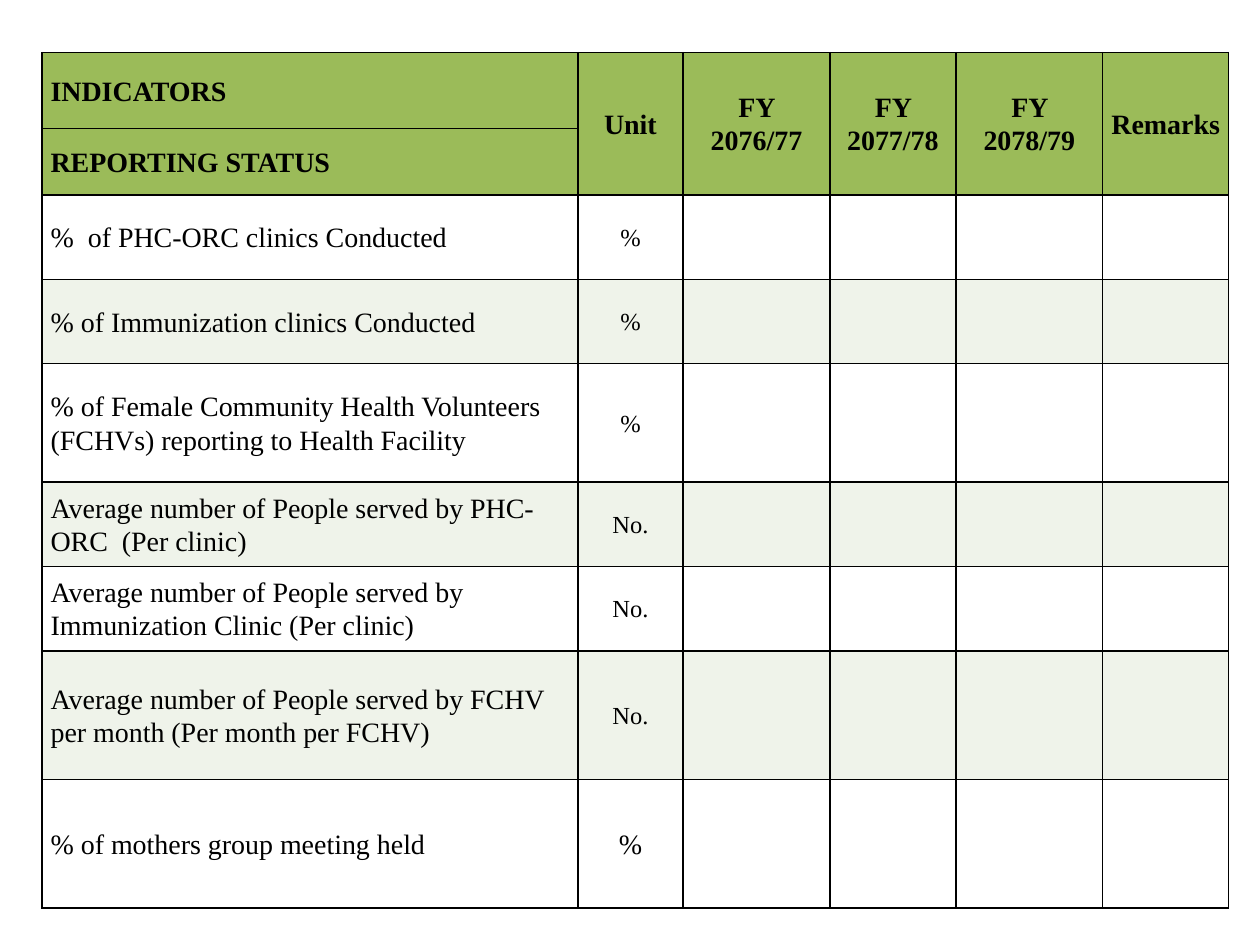
from dataclasses import dataclass

from lxml.etree import SubElement
from pptx import Presentation
from pptx.dml.color import RGBColor
from pptx.enum.text import MSO_ANCHOR, PP_ALIGN
from pptx.oxml.ns import qn
from pptx.table import Table, _Cell
from pptx.util import Cm, Pt

BLACK = RGBColor(0x00, 0x00, 0x00)
WHITE = RGBColor(0xFF, 0xFF, 0xFF)
GREEN = RGBColor(0x9B, 0xBB, 0x59)
PALE = RGBColor(0xEF, 0xF3, 0xEA)

COLUMN_WIDTHS = (10.8, 2.12, 2.96, 2.54, 2.96, 2.54)
HEADER_HEIGHTS = (1.53, 1.22)
HEADINGS = ("INDICATORS", "Unit", "FY 2076/77", "FY 2077/78", "FY 2078/79", "Remarks")
CELL_FORMAT = {
    "margin_left": Cm(0.17),
    "margin_right": Cm(0.17),
    "margin_top": Cm(0),
    "margin_bottom": Cm(0),
    "vertical_anchor": MSO_ANCHOR.MIDDLE,
}


@dataclass(frozen=True)
class Indicator:
    name: str
    unit: str
    height: float
    unit_size: int = 14


INDICATORS = (
    Indicator("%  of PHC-ORC clinics Conducted", "%", 1.7),
    Indicator("% of Immunization clinics Conducted", "%", 1.7),
    Indicator("% of Female Community Health Volunteers (FCHVs) reporting to Health Facility", "%", 2.39),
    Indicator("Average number of People served by PHC-ORC  (Per clinic)", "No.", 1.7),
    Indicator("Average number of People served by Immunization Clinic (Per clinic)", "No.", 1.7),
    Indicator("Average number of People served by FCHV per month (Per month per FCHV)", "No.", 2.59),
    Indicator("% of mothers group meeting held", "%", 2.59, 16),
)


def set_borders(cell: _Cell) -> None:
    """Outline a cell with thin black lines."""
    props = cell._tc.get_or_add_tcPr()
    for i, tag in enumerate(("a:lnL", "a:lnR", "a:lnT", "a:lnB")):
        line = SubElement(props, qn(tag), w=str(Pt(1)))
        fill = SubElement(line, qn("a:solidFill"))
        SubElement(fill, qn("a:srgbClr"), val=str(BLACK))
        props.insert(i, line)


def style_cell(cell: _Cell, color: RGBColor) -> None:
    """Apply the shared margins, fill and borders."""
    for name, value in CELL_FORMAT.items():
        setattr(cell, name, value)
    cell.fill.solid()
    cell.fill.fore_color.rgb = color
    set_borders(cell)


def write(cell: _Cell, text: str, size: int = 16, bold: bool = False, centered: bool = False) -> None:
    """Write one formatted paragraph into a cell."""
    p = cell.text_frame.paragraphs[0]
    p.line_spacing = 1.07
    p.alignment = PP_ALIGN.CENTER if centered else PP_ALIGN.LEFT
    r = p.add_run()
    r.text = text
    for name, value in {"name": "Times New Roman", "size": Pt(size), "bold": bold}.items():
        setattr(r.font, name, value)
    r.font.color.rgb = BLACK


def fill_header(table: Table) -> None:
    """Write the two header rows and merge the shared headings."""
    for col, heading in enumerate(HEADINGS):
        write(table.cell(0, col), heading, bold=True, centered=col > 0)
        if col > 0:
            table.cell(0, col).merge(table.cell(1, col))
    write(table.cell(1, 0), "REPORTING STATUS", bold=True)


def main() -> None:
    """Build the indicator table slide."""
    prs = Presentation()
    prs.slide_width, prs.slide_height = Cm(25.4), Cm(19.05)
    s = prs.slides.add_slide(prs.slide_layouts[6])
    heights = HEADER_HEIGHTS + tuple(item.height for item in INDICATORS)
    table = s.shapes.add_table(
        len(heights), len(COLUMN_WIDTHS), Cm(0.85), Cm(1.06), Cm(sum(COLUMN_WIDTHS)), Cm(sum(heights))
    ).table
    for column, width in zip(table.columns, COLUMN_WIDTHS):
        column.width = Cm(width)
    for i, (row, height) in enumerate(zip(table.rows, heights)):
        row.height = Cm(height)
        color = GREEN if i < len(HEADER_HEIGHTS) else (WHITE, PALE)[i % 2]
        for cell in row.cells:
            style_cell(cell, color)
    fill_header(table)
    for i, item in enumerate(INDICATORS, len(HEADER_HEIGHTS)):
        write(table.cell(i, 0), item.name)
        write(table.cell(i, 1), item.unit, item.unit_size, centered=True)
    prs.save("out.pptx")


if __name__ == "__main__":
    main()
